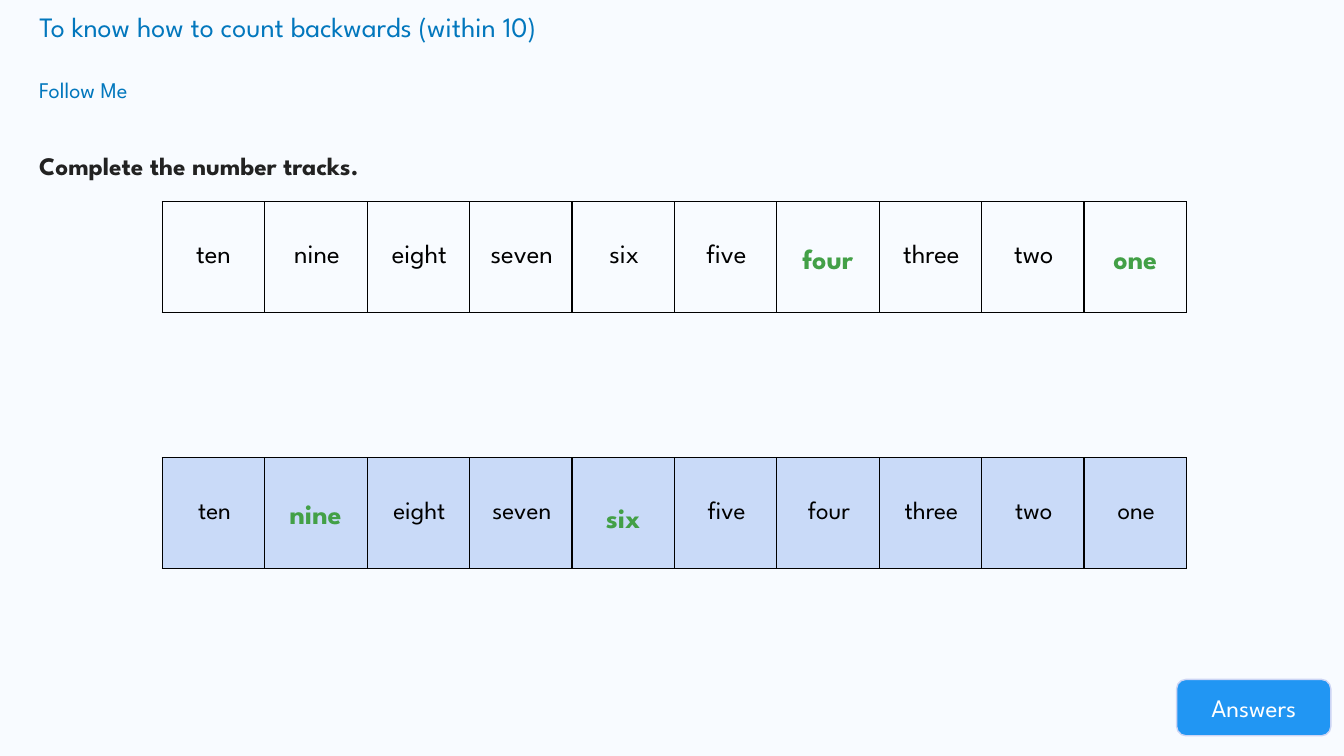
from lxml import etree
from pptx import Presentation
from pptx.dml.color import RGBColor
from pptx.enum import shapes, text
from pptx.oxml import ns

PX = 9144  # 100 px to the inch
FONT = "League Spartan"
BLUE, BLACK, GREEN = "0277BD", "000000", "43A047"
LEFT, CENTER = text.PP_ALIGN.LEFT, text.PP_ALIGN.CENTER
TOP, MIDDLE = text.MSO_ANCHOR.TOP, text.MSO_ANCHOR.MIDDLE


def colour(value):
    return RGBColor.from_string(value)


def write(frame, words, size, hex_colour, bold=False, align=LEFT, spacing=1.0):
    """Fill the first paragraph of a text frame and return it."""
    paragraph = frame.paragraphs[0]
    paragraph.alignment = align
    paragraph.line_spacing = spacing
    run = paragraph.add_run()
    run.text = words
    run.font.name = FONT
    run.font.size = size * 12700
    run.font.bold = bold
    run.font.color.rgb = colour(hex_colour)
    return paragraph


presentation = Presentation()
presentation.slide_width = 1333 * PX
presentation.slide_height = 750 * PX
slide = presentation.slides.add_slide(presentation.slide_layouts[5])
slide.background.fill.solid()
slide.background.fill.fore_color.rgb = colour("F8FBFF")

# Headings
title = slide.shapes.title
title.left, title.top, title.width, title.height = 29 * PX, 4 * PX, 1234 * PX, 44 * PX
title.text_frame.auto_size = text.MSO_AUTO_SIZE.NONE
title.text_frame.vertical_anchor = TOP
write(title.text_frame, "To know how to count backwards (within 10)", 20, BLUE)

for words, top, width, height, size, hex_colour, bold, spacing in [
    ("Follow Me", 71, 297, 46, 16, BLUE, False, 1.0),
    ("Complete the number tracks.", 129, 1284, 56, 18, "222222", True, 1.5),
]:
    box = slide.shapes.add_textbox(29 * PX, top * PX, width * PX, height * PX)
    box.text_frame.word_wrap = True
    write(box.text_frame, words, size, hex_colour, bold, spacing=spacing)

# Answers button
button = slide.shapes.add_shape(
    shapes.MSO_SHAPE.ROUNDED_RECTANGLE, 1167 * PX, 674 * PX, 153 * PX, 56 * PX)
button.shadow.inherit = False
button.fill.solid()
button.fill.fore_color.rgb = colour("2196F3")
button.line.color.rgb = colour("CCD4F4")
button.line.width = 12700
button.text_frame.vertical_anchor = MIDDLE
write(button.text_frame, "Answers", 18, "FFFFFF", align=CENTER)

# Number tracks: the answers lie over empty cells
NUMBERS = ["ten", "nine", "eight", "seven", "six", "five", "four", "three", "two", "one"]
TRACK_LEFT, TRACK_WIDTH, TRACK_HEIGHT = 161, 1016, 110
TRACKS = [
    # top, size, cell fill, top of each answer
    (200, 19, None, {"four": 191, "one": 191}),
    (454, 18, "C9DAF8", {"nine": 444, "six": 448}),
]
for top, size, cell_fill, answers in TRACKS:
    table = slide.shapes.add_table(
        1, len(NUMBERS), TRACK_LEFT * PX, top * PX, TRACK_WIDTH * PX, TRACK_HEIGHT * PX).table
    table.first_row = table.horz_banding = False
    for cell, number in zip(table.rows[0].cells, NUMBERS):
        cell.vertical_anchor = MIDDLE
        properties = cell._tc.get_or_add_tcPr()
        for side in ("lnL", "lnR", "lnT", "lnB"):
            border = etree.SubElement(properties, ns.qn(f"a:{side}"), w="12700")
            line_fill = etree.SubElement(border, ns.qn("a:solidFill"))
            etree.SubElement(line_fill, ns.qn("a:srgbClr"), val=BLACK)
        if cell_fill:
            cell.fill.solid()
            cell.fill.fore_color.rgb = colour(cell_fill)
        else:
            cell.fill.background()
        if number not in answers:
            paragraph = write(cell.text_frame, number, size, BLACK, align=CENTER)
            if (number, size) != ("ten", 19):
                paragraph._p.get_or_add_pPr().set("marL", str(2 * PX))

for _, _, _, answers in TRACKS:
    for number, top in answers.items():
        left = TRACK_LEFT + NUMBERS.index(number) * TRACK_WIDTH // len(NUMBERS)
        box = slide.shapes.add_textbox(left * PX, top * PX, 102 * PX, 126 * PX)
        frame = box.text_frame
        frame.word_wrap = True
        frame.vertical_anchor = MIDDLE
        frame.margin_top = frame.margin_bottom = 10 * PX
        write(frame, number, 20, GREEN, True, CENTER, 1.15)

presentation.save("out.pptx")
